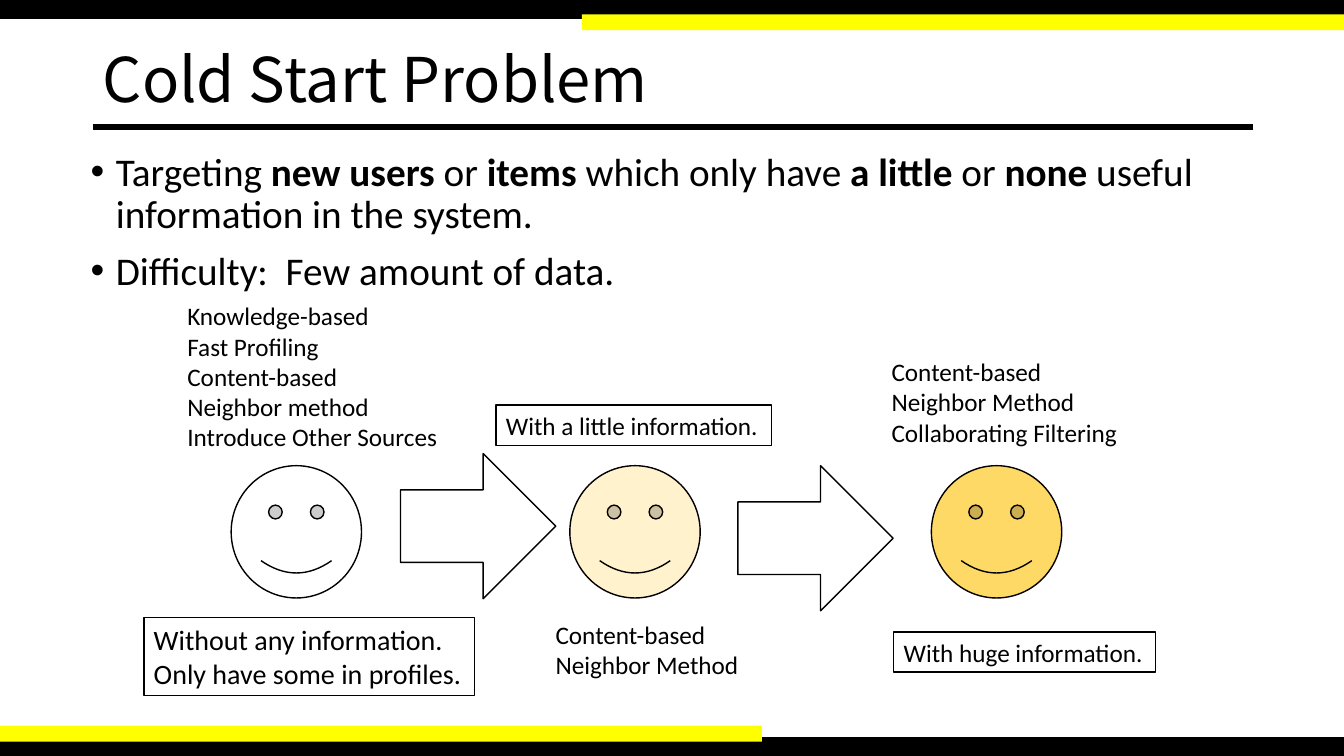
from dataclasses import dataclass
from typing import Any, Optional

from lxml.etree import SubElement
from pptx import Presentation
from pptx.dml.color import RGBColor
from pptx.enum.shapes import MSO_CONNECTOR, MSO_SHAPE
from pptx.enum.text import MSO_ANCHOR, MSO_AUTO_SIZE, PP_ALIGN
from pptx.oxml.ns import qn
from pptx.util import Inches, Pt

BLACK = RGBColor(0x00, 0x00, 0x00)
WHITE = RGBColor(0xFF, 0xFF, 0xFF)
YELLOW = RGBColor(0xFF, 0xFF, 0x00)
CREAM = RGBColor(0xFF, 0xF2, 0xCC)
GOLD = RGBColor(0xFF, 0xD9, 0x66)

BODY_FONT = "Calibri"
TITLE_FONT = "Noto Sans CJK SC"
WIDTH, HEIGHT = Inches(13.33), Inches(7.5)


@dataclass(frozen=True)
class Area:
    """Shares of the slide's width and height, in percent."""

    left: float
    top: float
    width: float
    height: float

    def lengths(self) -> tuple[int, int, int, int]:
        return (
            round(WIDTH * self.left / 100),
            round(HEIGHT * self.top / 100),
            round(WIDTH * self.width / 100),
            round(HEIGHT * self.height / 100),
        )


@dataclass(frozen=True)
class Figure:
    kind: MSO_SHAPE
    area: Area
    fill: RGBColor
    outlined: bool = True


@dataclass(frozen=True)
class Label:
    area: Area
    lines: tuple[str, ...]
    size: int = 18
    framed: bool = False


def bar(left: float, top: float, width: float, height: float, fill: RGBColor) -> Figure:
    return Figure(MSO_SHAPE.RECTANGLE, Area(left, top, width, height), fill, False)


def face(left: float, fill: RGBColor) -> Figure:
    return Figure(MSO_SHAPE.SMILEY_FACE, Area(left, 61.6, 9.7, 17.5), fill)


def arrow(left: float, top: float) -> Figure:
    return Figure(MSO_SHAPE.RIGHT_ARROW, Area(left, top, 11.55, 19.2), WHITE)


TITLE_AREA = Area(6.9, 5.2, 86.3, 11.5)
BODY_AREA = Area(6, 19.5, 86.3, 70)
RULE_AREA = Area(6.9, 16.8, 86.3, 0)

FIGURES = (
    bar(0, 0, 100, 2.5, BLACK),
    bar(0, 97.5, 100, 2.5, BLACK),
    bar(43.3, 1.9, 56.7, 2.1, YELLOW),
    bar(0, 96, 56.7, 2.1, YELLOW),
    face(17.2, WHITE),
    face(42.4, CREAM),
    face(69.3, GOLD),
    arrow(29.8, 60),
    arrow(54.9, 61.6),
)

LABELS = (
    Label(Area(10.7, 81.7, 24.6, 10.3),
          ("Without any information.", "Only have some in profiles."), 20, True),
    Label(Area(36.9, 53.6, 20.5, 5.3), ("With a little information.",), framed=True),
    Label(Area(66.5, 83.6, 19.5, 5.3), ("With huge information.",), framed=True),
    Label(Area(13.2, 39.1, 20.3, 21.6),
          ("Knowledge-based", "Fast Profiling", "Content-based",
           "Neighbor method", "Introduce Other Sources")),
    Label(Area(40.6, 81.2, 15.3, 9.5), ("Content-based", "Neighbor Method")),
    Label(Area(65.6, 46.5, 18.5, 13.5),
          ("Content-based", "Neighbor Method", "Collaborating Filtering")),
)

BULLETS = (
    (("Targeting ", False), ("new users ", True), ("or ", False), ("items", True),
     (" which only have ", False), ("a little ", True), ("or", False),
     (" none ", True), ("useful information in the system.", False)),
    (("Difficulty:  Few amount of data.", False),),
)


def apply(target: Any, values: dict[str, Any]) -> None:
    for name, value in values.items():
        setattr(target, name, value)


def place(shape: Any, area: Area) -> None:
    apply(shape, dict(zip(("left", "top", "width", "height"), area.lengths())))


def write(para: Any, text: str, size: int, font: str = BODY_FONT,
          bold: Optional[bool] = None) -> None:
    span = para.add_run()
    span.text = text
    apply(span.font, {"name": font, "size": Pt(size), "bold": bold})
    span.font.color.rgb = BLACK


def paint(shape: Any, fill: RGBColor, outlined: bool) -> None:
    shape.fill.solid()
    shape.fill.fore_color.rgb = fill
    if outlined:
        shape.line.color.rgb = BLACK
        shape.line.width = Pt(1)
    else:
        shape.line.fill.background()


def draw_figure(page: Any, figure: Figure) -> None:
    shape = page.shapes.add_shape(figure.kind, *figure.area.lengths())
    shape.shadow.inherit = False
    paint(shape, figure.fill, figure.outlined)


def draw_label(page: Any, label: Label) -> None:
    box = page.shapes.add_textbox(*label.area.lengths())
    if label.framed:
        paint(box, WHITE, True)
    frame = box.text_frame
    apply(frame, {"word_wrap": False, "auto_size": MSO_AUTO_SIZE.SHAPE_TO_FIT_TEXT})
    for index, line in enumerate(label.lines):
        para = frame.add_paragraph() if index else frame.paragraphs[0]
        write(para, line, label.size)


def draw_rule(page: Any) -> None:
    left, top, width, height = RULE_AREA.lengths()
    rule = page.shapes.add_connector(
        MSO_CONNECTOR.STRAIGHT, left, top, left + width, top + height)
    rule.line.color.rgb = BLACK
    rule.line.width = Pt(4)
    SubElement(rule._element.spPr, qn("a:effectLst"))


def fill_title(title: Any) -> None:
    place(title, TITLE_AREA)
    frame = title.text_frame
    apply(frame, {"vertical_anchor": MSO_ANCHOR.MIDDLE, "word_wrap": True,
                  "auto_size": MSO_AUTO_SIZE.NONE})
    para = frame.paragraphs[0]
    apply(para, {"alignment": PP_ALIGN.LEFT, "line_spacing": 0.9})
    write(para, "Cold Start Problem", 44, TITLE_FONT)


def fill_body(body: Any) -> None:
    place(body, BODY_AREA)
    frame = body.text_frame
    apply(frame, {"word_wrap": True, "auto_size": MSO_AUTO_SIZE.NONE})
    for index, bullet in enumerate(BULLETS):
        para = frame.add_paragraph() if index else frame.paragraphs[0]
        apply(para, {"line_spacing": 0.9, "space_before": Pt(10)})
        properties = para._p.get_or_add_pPr()
        properties.set("marL", str(Inches(0.25)))
        properties.set("indent", str(-Inches(0.25)))
        SubElement(properties, qn("a:buFont")).set("typeface", "Arial")
        SubElement(properties, qn("a:buChar")).set("char", "•")
        for text, bold in bullet:
            write(para, text, 28, bold=bold)


def main() -> None:
    deck = Presentation()
    apply(deck, {"slide_width": WIDTH, "slide_height": HEIGHT})
    page = deck.slides.add_slide(deck.slide_layouts[1])
    fill_title(page.shapes.title)
    fill_body(page.placeholders[1])
    draw_rule(page)
    for figure in FIGURES:
        draw_figure(page, figure)
    for label in LABELS:
        draw_label(page, label)
    deck.save("out.pptx")


if __name__ == "__main__":
    main()
